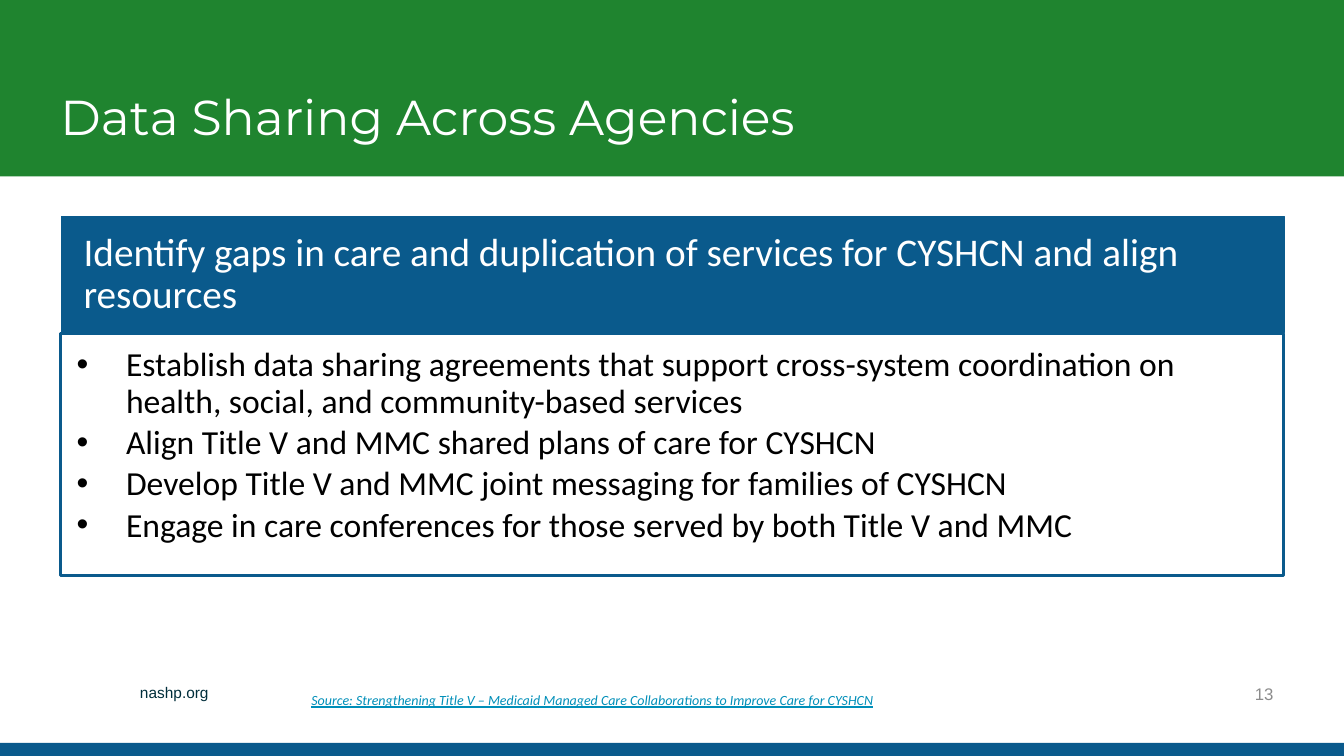
from lxml.etree import SubElement
from pptx import Presentation
from pptx.dml.color import RGBColor
from pptx.enum.shapes import MSO_SHAPE
from pptx.enum.text import MSO_ANCHOR, MSO_AUTO_SIZE, PP_ALIGN
from pptx.oxml.ns import qn
from pptx.util import Inches, Pt

GREEN = RGBColor(0x1F, 0x84, 0x2F)
BLUE = RGBColor(0x0A, 0x5A, 0x8C)
WHITE = RGBColor(0xFF, 0xFF, 0xFF)
BLACK = RGBColor(0, 0, 0)
NAVY = RGBColor(0x00, 0x2E, 0x3B)
GRAY = RGBColor(0x8C, 0x8C, 0x8C)
TEAL = RGBColor(0x00, 0x8F, 0xB9)

# Content
TITLE = "Data Sharing Across Agencies"
HEAD = "Identify gaps in care and duplication of services for CYSHCN and align resources"
STEPS = [
    "Establish data sharing agreements that support cross-system coordination on "
    "health, social, and community-based services",
    "Align Title V and MMC shared plans of care for CYSHCN",
    "Develop Title V and MMC joint messaging for families of CYSHCN",
    "Engage in care conferences for those served by both Title V and MMC",
]
SITE = "nashp.org"
SOURCE = ("Source: Strengthening Title V – Medicaid Managed Care Collaborations "
          "to Improve Care for CYSHCN")
PAGE = "13"

# Bands: box, colour
BANDS = [((0, 0, 13.33, 1.75), GREEN), ((0, 7.37, 13.33, 0.13), BLUE)]


def place(shape, box):
    shape.left, shape.top, shape.width, shape.height = map(Inches, box)


def setup(shape, pads, anchor):
    frame = shape.text_frame
    frame.word_wrap = True
    frame.auto_size = MSO_AUTO_SIZE.NONE
    frame.vertical_anchor = anchor
    (frame.margin_left, frame.margin_top,
     frame.margin_right, frame.margin_bottom) = map(Inches, pads)
    return frame


def write(para, text, size, face, color, align=PP_ALIGN.LEFT):
    para.alignment = align
    run = para.add_run()
    run.text = text
    run.font.size = Pt(size)
    run.font.name = face
    run.font.color.rgb = color
    return run


def block(shapes, box, fill):
    shape = shapes.add_shape(MSO_SHAPE.RECTANGLE, *map(Inches, box))
    shape.shadow.inherit = False
    shape.fill.solid()
    shape.fill.fore_color.rgb = fill
    shape.line.fill.background()
    return shape


def label(shapes, box, anchor, *style):
    shape = shapes.add_textbox(*map(Inches, box))
    frame = setup(shape, (0.1, 0.05, 0.1, 0.05), anchor)
    return write(frame.paragraphs[0], *style)


def bullet(para):
    props = para._p.get_or_add_pPr()
    props.set("marL", str(Inches(0.51)))
    props.set("indent", str(Inches(-0.49)))
    SubElement(props, qn("a:buFont")).set("typeface", "Arial")
    SubElement(props, qn("a:buChar")).set("char", "•")


def main():
    deck = Presentation()
    deck.slide_width, deck.slide_height = Inches(13.33), Inches(7.5)
    slide = deck.slides.add_slide(deck.slide_layouts[1])
    shapes = slide.shapes
    title, body = shapes.title, slide.placeholders[1]

    # Bands behind the title
    for box, color in BANDS:
        title.element.addprevious(block(shapes, box, color).element)

    # Title
    place(title, (0.6, 0.22, 12.14, 1.28))
    para = setup(title, (0, 0.05, 0.1, 0.05), MSO_ANCHOR.BOTTOM).paragraphs[0]
    para.line_spacing = 0.9
    write(para, TITLE, 35, "Montserrat", WHITE)

    # Panel heading
    head = block(shapes, (0.61, 2.15, 12.13, 1.15), BLUE)
    head.line.color.rgb = BLUE
    head.line.width = Pt(1)
    para = setup(head, (0.22, 0.12, 0.22, 0.12), MSO_ANCHOR.MIDDLE).paragraphs[0]
    para.line_spacing = 0.9
    write(para, HEAD, 28, "Calibri", WHITE)

    # Panel list
    place(body, (0.6, 3.31, 12.13, 2.4))
    body.line.color.rgb = BLUE
    body.line.width = Pt(2.25)
    frame = setup(body, (0.14, 0.14, 0.19, 0.21), MSO_ANCHOR.TOP)
    for i, step in enumerate(STEPS):
        para = frame.add_paragraph() if i else frame.paragraphs[0]
        bullet(para)
        para.line_spacing = 0.9
        para.space_before = Pt(0)
        para.space_after = Pt(3.6)
        write(para, step, 24, "Calibri", BLACK)

    # Footer
    label(shapes, (1.29, 6.73, 1.6, 0.29), MSO_ANCHOR.TOP, SITE, 11, "Arial", NAVY)
    label(shapes, (9.67, 6.68, 3.06, 0.4), MSO_ANCHOR.MIDDLE,
          PAGE, 12, "Arial", GRAY, PP_ALIGN.RIGHT)
    cite = label(shapes, (2.99, 6.81, 9.42, 0.27), MSO_ANCHOR.TOP,
                 SOURCE, 10, "Calibri", TEAL)
    cite.font.italic = True
    cite.font.underline = True

    deck.save("out.pptx")


if __name__ == "__main__":
    main()
